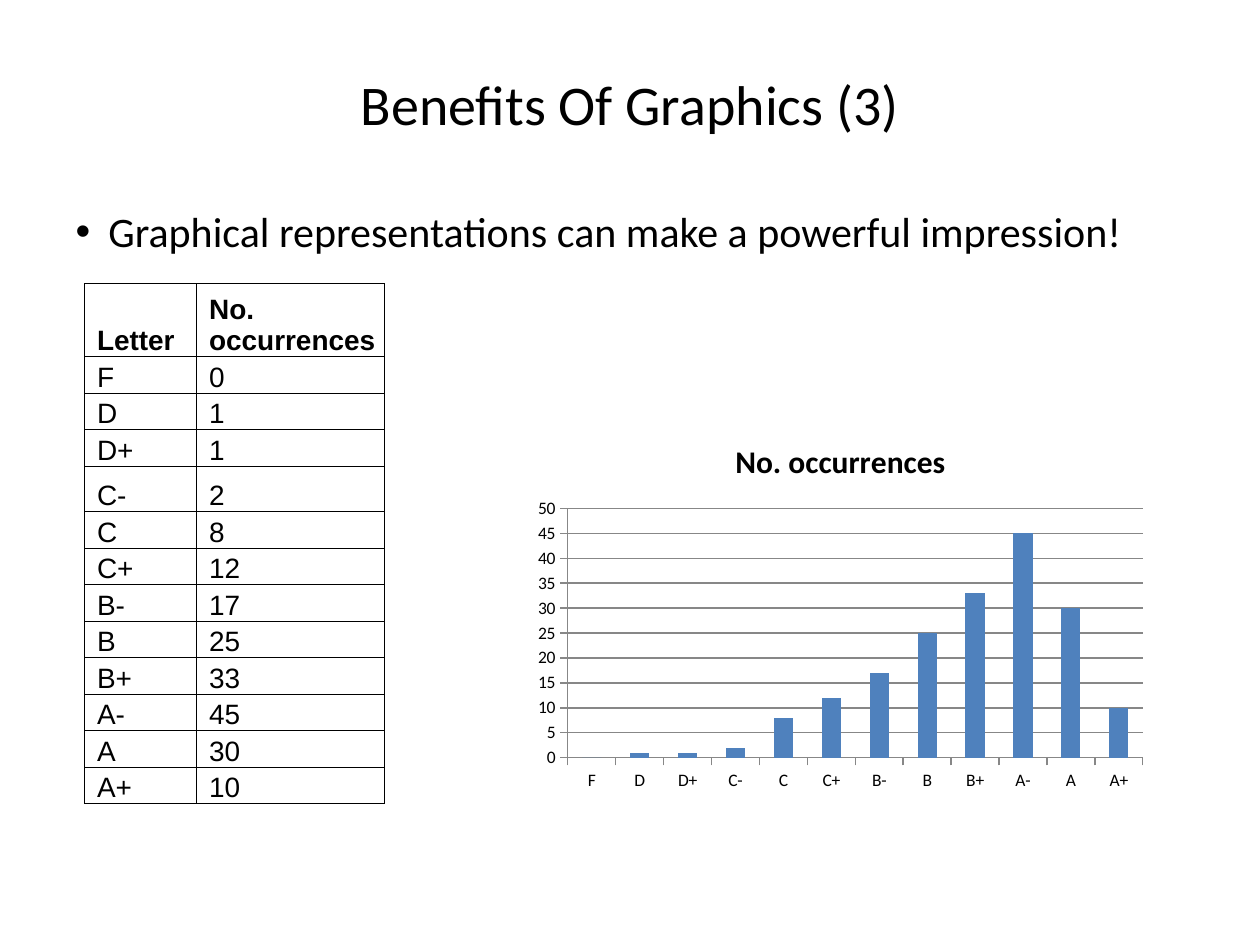
from dataclasses import dataclass

from lxml import etree
from pptx import Presentation
from pptx.chart.data import CategoryChartData
from pptx.dml.color import RGBColor
from pptx.enum.chart import XL_CHART_TYPE, XL_TICK_MARK
from pptx.enum.text import MSO_ANCHOR, PP_ALIGN
from pptx.oxml.ns import qn
from pptx.util import Inches, Pt

COLUMNS = XL_CHART_TYPE.COLUMN_CLUSTERED
TICK_OUT, TICK_NONE = XL_TICK_MARK.OUTSIDE, XL_TICK_MARK.NONE
BOTTOM, MIDDLE = MSO_ANCHOR.BOTTOM, MSO_ANCHOR.MIDDLE
LEFT, CENTER = PP_ALIGN.LEFT, PP_ALIGN.CENTER


@dataclass(frozen=True)
class Theme:
    ink: str = "000000"
    bars: str = "4F81BD"
    grid: str = "878787"
    body_font: str = "Calibri"
    table_font: str = "Arial"
    title_size: int = 32
    bullet_size: int = 24
    table_size: int = 16
    chart_title_size: int = 18
    axis_size: int = 10
    border_width: float = 0.5


THEME = Theme()
COUNT_LABEL = "No. occurrences"
GRADES = {
    "F": 0, "D": 1, "D+": 1, "C-": 2, "C": 8, "C+": 12,
    "B-": 17, "B": 25, "B+": 33, "A-": 45, "A": 30, "A+": 10,
}


def style_font(font, *, size, name=THEME.body_font, bold=False):
    font.name = name
    font.size = Pt(size)
    font.bold = bold
    font.color.rgb = RGBColor.from_string(THEME.ink)


def write_text(frame, text, *, align=LEFT, **font_format):
    paragraph = frame.paragraphs[0]
    paragraph.alignment = align
    run = paragraph.add_run()
    run.text = text
    style_font(run.font, **font_format)
    return paragraph


def place(shape, left, top, width, height):
    shape.left, shape.top = Inches(left), Inches(top)
    shape.width, shape.height = Inches(width), Inches(height)


def add_heading(slide):
    title = slide.shapes.title
    place(title, 0.5, 0.3, 9, 1.03)
    title.text_frame.vertical_anchor = MIDDLE
    write_text(title.text_frame, "Benefits Of Graphics (3)",
               align=CENTER, size=THEME.title_size)


def add_bullet(slide):
    body = slide.placeholders[1]
    place(body, 0.5, 1.58, 9, 5.5)
    paragraph = write_text(
        body.text_frame,
        "Graphical representations can make a powerful impression!",
        size=THEME.bullet_size)
    # Hanging indent; the bullet itself comes from the template
    properties = paragraph._p.get_or_add_pPr()
    properties.set("marL", str(Inches(0.26)))
    properties.set("indent", str(-Inches(0.26)))


def add_borders(cell):
    properties = cell._tc.get_or_add_tcPr()
    for position, side in enumerate(("lnL", "lnR", "lnT", "lnB")):
        line = etree.Element(qn(f"a:{side}"), w=str(Pt(THEME.border_width)))
        fill = etree.SubElement(line, qn("a:solidFill"))
        etree.SubElement(fill, qn("a:srgbClr"), val=THEME.ink)
        properties.insert(position, line)


def fill_cell(cell, text, *, bold):
    cell.fill.background()
    cell.vertical_anchor = BOTTOM
    cell.margin_left = Inches(0.1)
    cell.margin_right = cell.margin_top = cell.margin_bottom = 0
    write_text(cell.text_frame, text, size=THEME.table_size,
               name=THEME.table_font, bold=bold)
    add_borders(cell)


def add_grade_table(slide):
    rows = [("Letter", COUNT_LABEL), *GRADES.items()]
    table = slide.shapes.add_table(
        len(rows), 2, Inches(0.67), Inches(2.25),
        Inches(2.38), Inches(4.14)).table
    table.first_row = table.horz_banding = False
    for column, width in zip(table.columns, (0.89, 1.49)):
        column.width = Inches(width)
    special_heights = {"Letter": 0.58, "C-": 0.36}
    for index, values in enumerate(rows):
        table.rows[index].height = Inches(special_heights.get(values[0], 0.29))
        for column, value in enumerate(values):
            fill_cell(table.cell(index, column), str(value), bold=index == 0)


def style_line(line):
    line.color.rgb = RGBColor.from_string(THEME.grid)
    line.width = Pt(0.75)


def add_grade_chart(slide):
    data = CategoryChartData()
    data.categories = list(GRADES)
    data.add_series(COUNT_LABEL, list(GRADES.values()))
    chart = slide.shapes.add_chart(
        COLUMNS, Inches(4.17), Inches(3.33), Inches(5), Inches(3), data).chart
    style_font(chart.font, size=THEME.axis_size)
    chart.has_legend = False
    chart.has_title = True
    write_text(chart.chart_title.text_frame, COUNT_LABEL, align=CENTER,
               size=THEME.chart_title_size, bold=True)

    # Bars
    plot = chart.plots[0]
    plot.gap_width = 150
    plot.vary_by_categories = False
    bar_fill = plot.series[0].format.fill
    bar_fill.solid()
    bar_fill.fore_color.rgb = RGBColor.from_string(THEME.bars)

    # Axes and gridlines
    for axis in (chart.category_axis, chart.value_axis):
        axis.major_tick_mark = TICK_OUT
        axis.minor_tick_mark = TICK_NONE
        style_line(axis.format.line)
    counts = chart.value_axis
    counts.minimum_scale, counts.maximum_scale, counts.major_unit = 0, 50, 5
    counts.has_major_gridlines = True
    style_line(counts.major_gridlines.format.line)


def main():
    presentation = Presentation()
    presentation.slide_width = Inches(10)
    presentation.slide_height = Inches(7.5)
    slide = presentation.slides.add_slide(presentation.slide_layouts[1])
    add_heading(slide)
    add_bullet(slide)
    add_grade_table(slide)
    add_grade_chart(slide)
    presentation.save("out.pptx")


if __name__ == "__main__":
    main()
